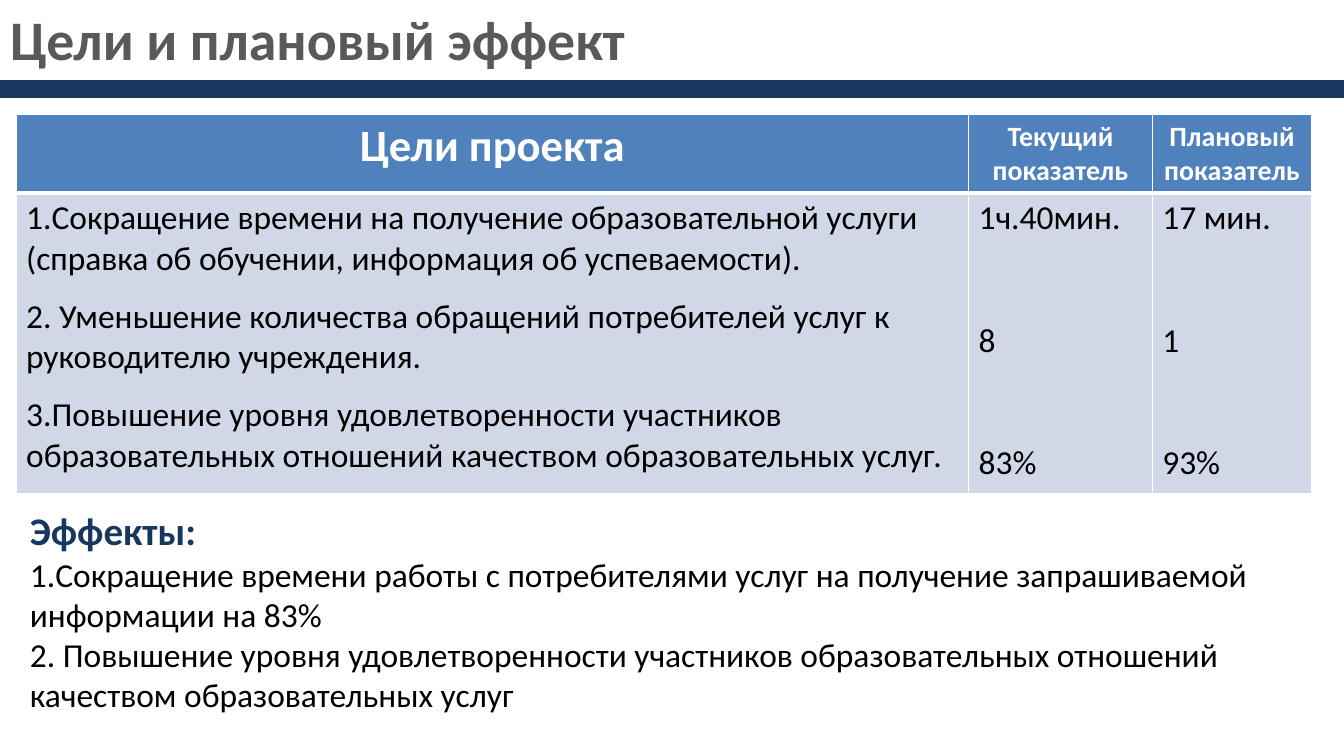
from dataclasses import dataclass

from pptx import Presentation
from pptx.dml.color import RGBColor
from pptx.enum.shapes import MSO_SHAPE
from pptx.enum.text import MSO_ANCHOR, MSO_AUTO_SIZE, PP_ALIGN
from pptx.oxml import parse_xml
from pptx.oxml.ns import nsdecls
from pptx.util import Inches, Pt

WIDTH, HEIGHT = Inches(13.39), Inches(7.48)


@dataclass(frozen=True)
class Theme:
    font: str = "Calibri"
    white: str = "FFFFFF"
    black: str = "000000"
    grey: str = "595959"
    navy: str = "17375E"
    header: str = "4F81BD"
    body: str = "D0D8E8"
    title_size: int = 40
    goals_size: int = 32
    effects_size: int = 28
    text_size: int = 24
    column_size: int = 20


T = Theme()


@dataclass(frozen=True)
class Box:
    """Left, top, width and height in percent of the slide."""
    x: float
    y: float
    w: float
    h: float

    def emu(self) -> tuple[int, int, int, int]:
        return across(self.x), down(self.y), across(self.w), down(self.h)


@dataclass(frozen=True)
class Style:
    size: int
    color: str
    bold: bool = False
    align: PP_ALIGN = PP_ALIGN.LEFT
    before: float = 0


@dataclass(frozen=True)
class Column:
    width: float
    heading: str
    heading_size: int
    entries: tuple[str, ...]
    gap: float


TITLE = Box(0, 0, 75.28, 10.29)
BAR = Box(0, 10.83, 100, 2)
TABLE = Box(1.2, 15.24, 96.41, 50.39)
EFFECTS = Box(1.49, 66.84, 95.89, 29.28)
ROW_HEIGHTS = (10.29, 40.1)
TWO_LINES = 2 * 1.22 * T.text_size

COLUMNS = (
    Column(70.87, "Цели проекта", T.goals_size, (
        "1.Сокращение времени на получение образовательной услуги "
        "(справка об обучении, информация об успеваемости).",
        "2. Уменьшение количества обращений потребителей услуг к "
        "руководителю учреждения.",
        "3.Повышение уровня удовлетворенности участников "
        "образовательных отношений качеством образовательных услуг.",
    ), 12),
    Column(13.67, "Текущий показатель", T.column_size,
           ("1ч.40мин.", "8", "83%"), TWO_LINES),
    Column(11.87, "Плановый показатель", T.column_size,
           ("17 мин.", "1", "93%"), TWO_LINES),
)
EFFECT_LINES = (
    "1.Сокращение времени работы с потребителями услуг на получение "
    "запрашиваемой информации на 83%",
    "2. Повышение уровня удовлетворенности участников образовательных "
    "отношений качеством образовательных услуг",
)


def across(percent: float) -> int:
    return round(WIDTH * percent / 100)


def down(percent: float) -> int:
    return round(HEIGHT * percent / 100)


def rgb(color: str) -> RGBColor:
    return RGBColor.from_string(color)


def write(tf, lines: list[tuple[str, Style]]) -> None:
    tf.word_wrap = True
    for i, (text, style) in enumerate(lines):
        p = tf.paragraphs[0] if i == 0 else tf.add_paragraph()
        p.text = text
        p.alignment = style.align
        p.space_before = Pt(style.before if i else 0)
        p.font.name, p.font.size = T.font, Pt(style.size)
        p.font.bold, p.font.color.rgb = style.bold, rgb(style.color)


def paint_cell(cell, fill: str, top: int, bottom: int) -> None:
    """Fill a cell and give it white borders; top and bottom are in points."""
    tc_pr = cell._tc.get_or_add_tcPr()
    for side, points in (("L", 1), ("R", 1), ("T", top), ("B", bottom)):
        tc_pr.append(parse_xml(
            f'<a:ln{side} {nsdecls("a")} w="{Pt(points)}"><a:solidFill>'
            f'<a:srgbClr val="{T.white}"/></a:solidFill></a:ln{side}>'))
    cell.fill.solid()
    cell.fill.fore_color.rgb = rgb(fill)


def add_title(s) -> None:
    sp = s.shapes.title
    sp.left, sp.top, sp.width, sp.height = TITLE.emu()
    tf = sp.text_frame
    tf.auto_size, tf.vertical_anchor = MSO_AUTO_SIZE.NONE, MSO_ANCHOR.TOP
    write(tf, [("Цели и плановый эффект", Style(T.title_size, T.grey, True))])


def add_goals(s) -> None:
    table = s.shapes.add_table(2, len(COLUMNS), *TABLE.emu()).table
    for row, height in zip(table.rows, ROW_HEIGHTS):
        row.height = down(height)
    for i, column in enumerate(COLUMNS):
        table.columns[i].width = across(column.width)
        head, body = table.cell(0, i), table.cell(1, i)
        paint_cell(head, T.header, 1, 3)
        paint_cell(body, T.body, 3, 1)
        write(head.text_frame, [(column.heading, Style(
            column.heading_size, T.white, True, PP_ALIGN.CENTER))])
        entry = Style(T.text_size, T.black, before=column.gap)
        write(body.text_frame, [(text, entry) for text in column.entries])


def add_bar(s) -> None:
    sp = s.shapes.add_shape(MSO_SHAPE.RECTANGLE, *BAR.emu())
    sp.shadow.inherit = False
    sp.fill.solid()
    sp.fill.fore_color.rgb = sp.line.color.rgb = rgb(T.navy)
    sp.line.width = Pt(2)


def add_effects(s) -> None:
    tf = s.shapes.add_textbox(*EFFECTS.emu()).text_frame
    heading = ("Эффекты:", Style(T.effects_size, T.navy, True))
    plain = Style(T.text_size, T.black)
    write(tf, [heading, *((text, plain) for text in EFFECT_LINES)])


def main() -> None:
    prs = Presentation()
    prs.slide_width, prs.slide_height = WIDTH, HEIGHT
    s = prs.slides.add_slide(prs.slide_layouts[5])
    add_title(s)
    add_goals(s)
    add_bar(s)
    add_effects(s)
    prs.save("out.pptx")


if __name__ == "__main__":
    main()
